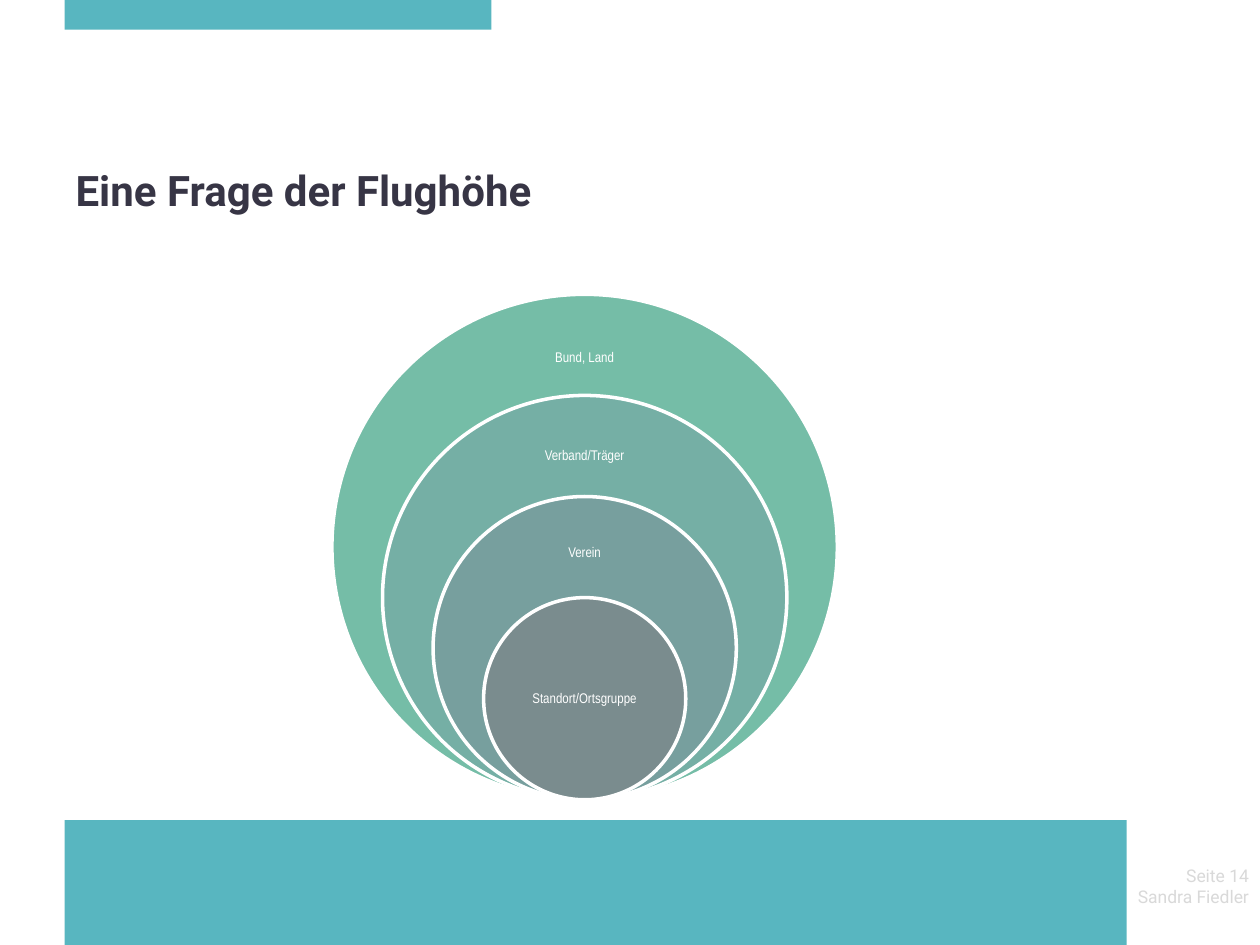
from pptx import Presentation
from pptx.dml.color import RGBColor
from pptx.enum.shapes import MSO_SHAPE
from pptx.enum.text import MSO_ANCHOR, PP_ALIGN
from pptx.util import Pt

TEAL = RGBColor(0x58, 0xB6, 0xC0)
DARK = RGBColor(0x37, 0x35, 0x45)
GREY = RGBColor(0xD9, 0xD9, 0xD9)
WHITE = RGBColor(0xFF, 0xFF, 0xFF)

TITLE = "Eine Frage der Flughöhe"
FOOTER = ["Seite 14", "Sandra Fiedler"]
BARS = [(36.9, 468.7, 606.9, 71.3), (36.9, 0, 243.9, 17)]
LEVELS = [
    ("Bund, Land", RGBColor(0x75, 0xBD, 0xA7), 204.5),
    ("Verband/Träger", RGBColor(0x75, 0xAF, 0xA5), 260.6),
    ("Verein", RGBColor(0x77, 0x9F, 0x9E), 316.2),
    ("Standort/Ortsgruppe", RGBColor(0x7A, 0x8C, 0x8E), 399.6),
]
CENTER_X, BOTTOM, DIAMETER = 334.1, 457, 288.8
LABEL_W, LABEL_H = 81, 42


def write(sp, lines, font, size, color, bold=False, align=PP_ALIGN.LEFT,
          anchor=MSO_ANCHOR.TOP, inset=None, spacing=None):
    tf = sp.text_frame
    tf.word_wrap = True
    tf.vertical_anchor = anchor
    if inset is not None:
        tf.margin_left = tf.margin_right = Pt(inset)
        tf.margin_top = tf.margin_bottom = Pt(inset)
    for i, line in enumerate(lines):
        p = tf.add_paragraph() if i else tf.paragraphs[0]
        p.alignment = align
        p.line_spacing = spacing
        r = p.add_run()
        r.text = line
        r.font.name, r.font.size, r.font.bold = font, Pt(size), bold
        r.font.color.rgb = color


def add_shape(s, kind, box, fill, line=None):
    sp = s.shapes.add_shape(kind, *map(Pt, box))
    sp.shadow.inherit = False
    sp.fill.solid()
    sp.fill.fore_color.rgb = fill
    if line is None:
        sp.line.fill.background()
    else:
        sp.line.color.rgb = line
        sp.line.width = Pt(2)


prs = Presentation()
prs.slide_width, prs.slide_height = Pt(720), Pt(540)
s = prs.slides.add_slide(prs.slide_layouts[5])

for bar in BARS:
    add_shape(s, MSO_SHAPE.RECTANGLE, bar, TEAL)

footer = s.shapes.add_textbox(Pt(637.9), Pt(491), Pt(82.8), Pt(49))
write(footer, FOOTER, "Roboto", 10, GREY, align=PP_ALIGN.RIGHT)

title = s.shapes.title
title.left, title.top, title.width, title.height = Pt(36), Pt(88.5), Pt(648), Pt(39.6)
write(title, [TITLE], "Roboto", 24, DARK, bold=True, anchor=MSO_ANCHOR.MIDDLE)

for i, (label, color, label_y) in enumerate(LEVELS):
    d = DIAMETER * (1 - i / 5)
    add_shape(s, MSO_SHAPE.OVAL, (CENTER_X - d / 2, BOTTOM - d, d, d), color, WHITE)
    tb = s.shapes.add_textbox(Pt(CENTER_X - LABEL_W / 2), Pt(label_y - LABEL_H / 2),
                              Pt(LABEL_W), Pt(LABEL_H))
    write(tb, [label], "Arial Narrow", 8, WHITE, align=PP_ALIGN.CENTER,
          anchor=MSO_ANCHOR.MIDDLE, inset=4.3, spacing=0.9)

prs.save("out.pptx")
